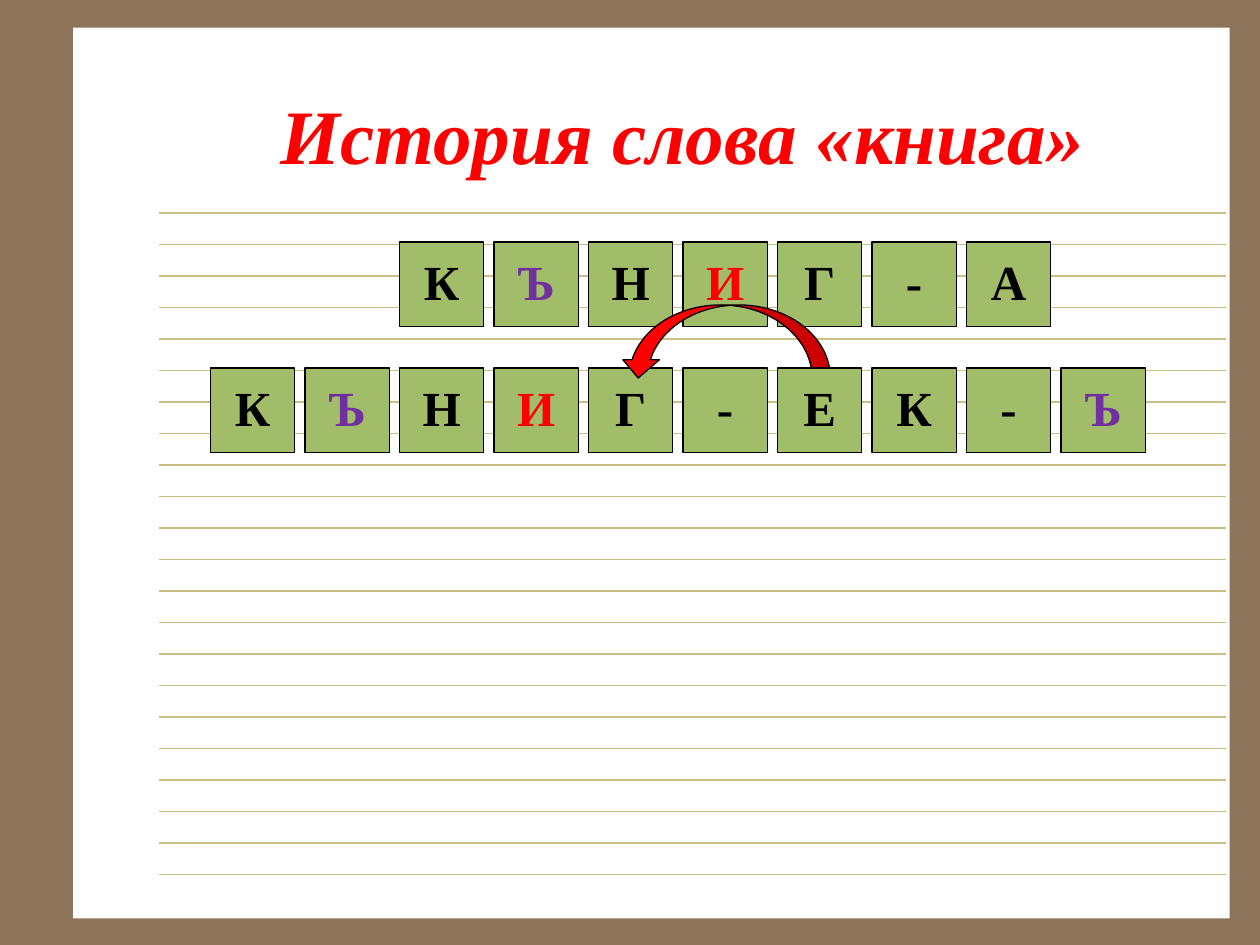
from dataclasses import dataclass

import pptx
import pptx.dml.color
import pptx.enum.shapes
import pptx.enum.text
import pptx.oxml.ns
import pptx.util
from lxml import etree
from pptx.dml.color import RGBColor
from pptx.util import Inches

BROWN = RGBColor(0x8C, 0x73, 0x5A)
WHITE = RGBColor(0xFF, 0xFF, 0xFF)
RULE = RGBColor(0xCB, 0xBD, 0x83)
GREEN = RGBColor(0xA1, 0xBD, 0x69)
BLACK = RGBColor(0, 0, 0)
RED = RGBColor(0xFF, 0, 0)
PURPLE = RGBColor(0x70, 0x30, 0xA0)

FONT = "Times New Roman"
LETTER_COLORS = {"Ъ": PURPLE, "И": RED}
TILE_SIZE = 0.67
TILE_STEP = 0.75
SHAPES = pptx.enum.shapes.MSO_SHAPE


@dataclass
class Word:
    letters: str
    left: float
    top: float


def add_filled(s, kind, left: float, top: float, width: float, height: float,
               fill: RGBColor, outlined: bool = True):
    sp = s.shapes.add_shape(kind, Inches(left), Inches(top), Inches(width), Inches(height))
    sp.shadow.inherit = False
    sp.fill.solid()
    sp.fill.fore_color.rgb = fill
    if outlined:
        sp.line.color.rgb = BLACK
        sp.line.width = pptx.util.Pt(0.75)
    else:
        sp.line.fill.background()
    return sp


def format_text(tf, text: str, size: int, color: RGBColor, italic: bool = False) -> None:
    tf.text = text
    p = tf.paragraphs[0]
    p.alignment = pptx.enum.text.PP_ALIGN.CENTER
    r = p.runs[0]
    r.font.name = FONT
    r.font.size = pptx.util.Pt(size)
    r.font.bold = True
    r.font.italic = italic
    r.font.color.rgb = color


def add_rule(s, top: float) -> None:
    line = s.shapes.add_connector(pptx.enum.shapes.MSO_CONNECTOR.STRAIGHT,
                                  Inches(1.26), Inches(top), Inches(9.73), Inches(top))
    line.line.color.rgb = RULE
    line.line.width = pptx.util.Pt(0.75)
    etree.SubElement(line._element.spPr, pptx.oxml.ns.qn("a:effectLst"))


def add_tile(s, word: Word, index: int) -> None:
    letter = word.letters[index]
    sp = add_filled(s, SHAPES.RECTANGLE, word.left + index * TILE_STEP, word.top,
                    TILE_SIZE, TILE_SIZE, GREEN)
    tf = sp.text_frame
    tf.word_wrap = False
    tf.vertical_anchor = pptx.enum.text.MSO_ANCHOR.TOP
    tf.margin_top = Inches(0.08)
    format_text(tf, letter, 28, LETTER_COLORS.get(letter, BLACK))


def add_title(s, text: str) -> None:
    title = s.shapes.title
    title.left, title.top = Inches(1.17), Inches(0.44)
    title.width, title.height = Inches(8.5), Inches(1.25)
    title.text_frame.vertical_anchor = pptx.enum.text.MSO_ANCHOR.MIDDLE
    format_text(title.text_frame, text, 44, RED, italic=True)
    s.shapes._spTree.append(title._element)


def main() -> None:
    prs = pptx.Presentation()
    prs.slide_width, prs.slide_height = Inches(10), Inches(7.5)
    s = prs.slides.add_slide(prs.slide_layouts[5])
    s.background.fill.solid()
    s.background.fill.fore_color.rgb = BROWN

    add_filled(s, SHAPES.RECTANGLE, 0.58, 0.22, 9.18, 7.07, WHITE, outlined=False)
    for i in range(22):
        add_rule(s, 1.69 + i * 0.25)
    add_title(s, "История слова «книга»")

    book = Word("КЪНИГ-А", 3.17, 1.92)
    booklet = Word("КЪНИГ-ЕК-Ъ", 1.67, 2.92)
    arrow_source = booklet.letters.index("Е")

    for i in range(len(book.letters)):
        add_tile(s, book, i)
    for i in range(len(booklet.letters)):
        if i != arrow_source:
            add_tile(s, booklet, i)
    arrow = add_filled(s, SHAPES.CURVED_UP_ARROW, 4.92, 2.42, 1.67, 0.58, RED)
    arrow.rotation = 180
    add_tile(s, booklet, arrow_source)

    prs.save("out.pptx")


if __name__ == "__main__":
    main()
